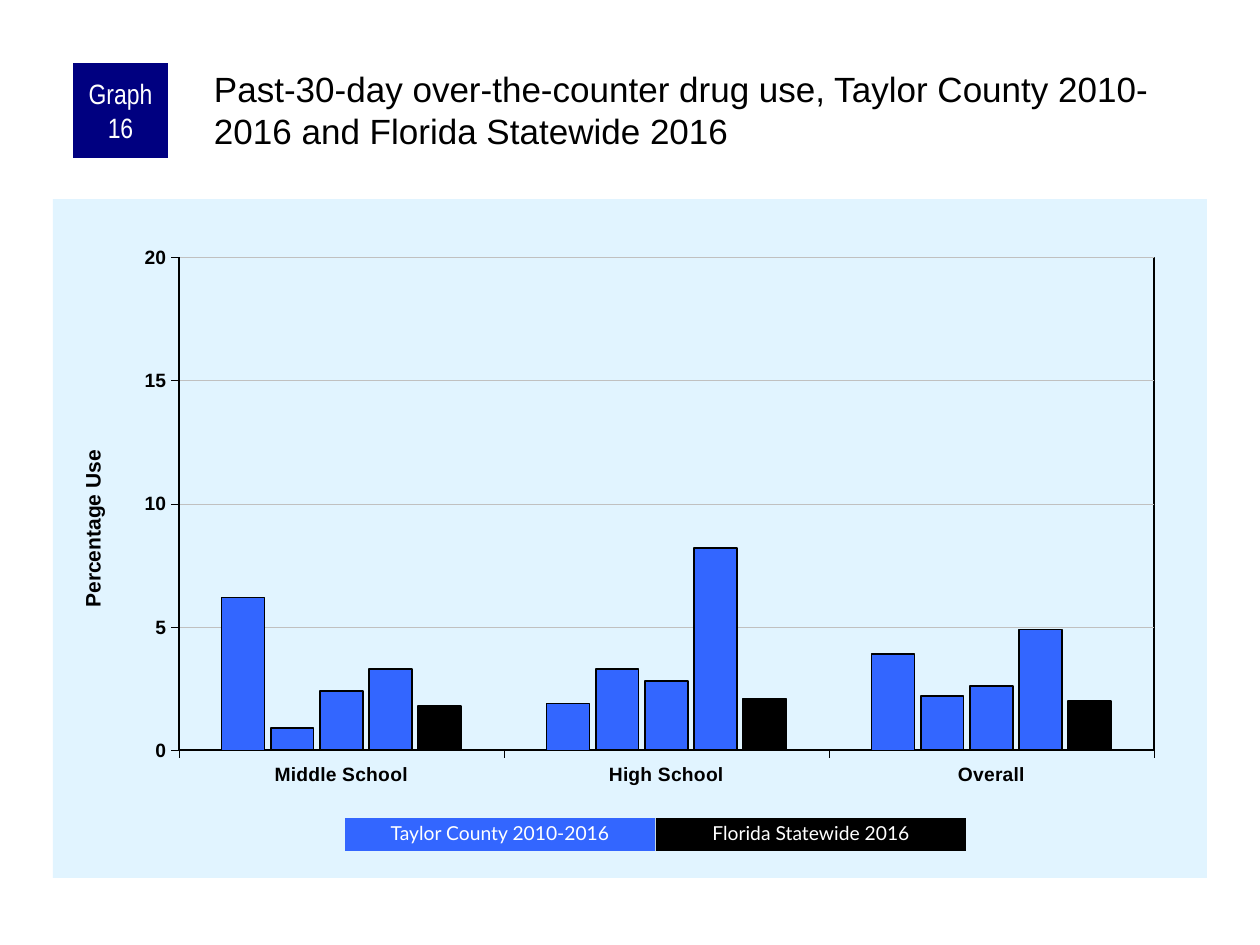
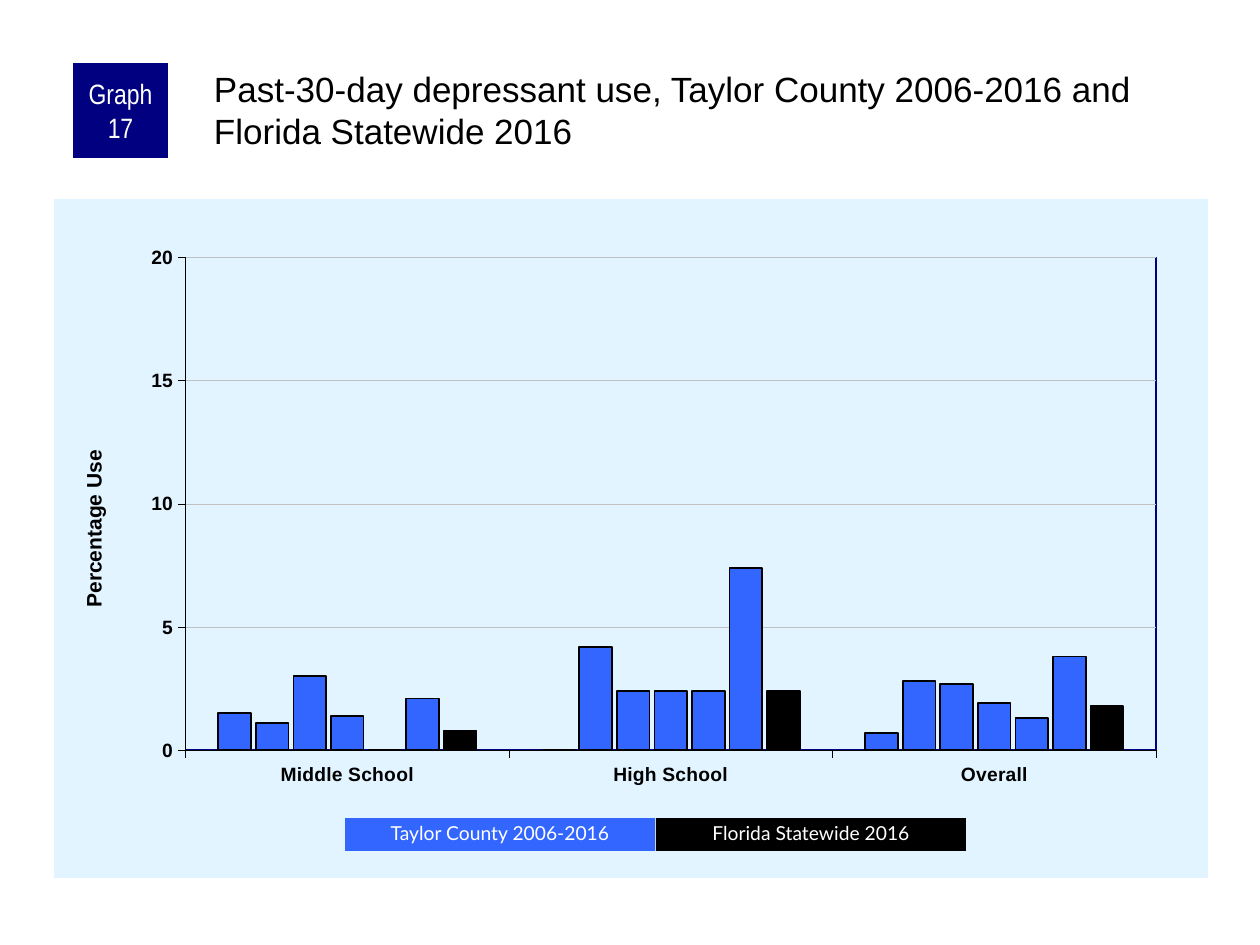
import pptx
import pptx.chart.data
import pptx.dml.color
import pptx.enum.chart
import pptx.enum.shapes
import pptx.enum.text
import pptx.oxml
import pptx.oxml.ns
import pptx.util

RGB = pptx.dml.color.RGBColor
Pt = pptx.util.Pt
NAVY = RGB(0x00, 0x00, 0x80)
BLUE = RGB(0x33, 0x66, 0xFF)
SKY = RGB(0xE1, 0xF4, 0xFF)
GREY = RGB(0xC0, 0xC0, 0xC0)
BLACK = RGB(0, 0, 0)
WHITE = RGB(255, 255, 255)

PX = 914400 / 126  # EMU in one px
NS = pptx.oxml.ns.nsdecls("c", "a")
CATS = ["Middle School", "High School", "Overall"]

# What differs between the slides; each row of values is one series
SLIDES = [
    dict(num=16, years="2010-2016", left=53, plot=(0.109, 0.845), edge=BLACK,
         title="Past-30-day over-the-counter drug use, Taylor County 2010-2016 "
               "and Florida Statewide 2016",
         rows=[(6.2, 1.9, 3.9), (0.9, 3.3, 2.2), (2.4, 2.8, 2.6),
               (3.3, 8.2, 4.9), (1.8, 2.1, 2)]),
    dict(num=17, years="2006-2016", left=54, plot=(0.114, 0.841), edge=NAVY,
         title="Past-30-day depressant use, Taylor County 2006-2016 "
               "and Florida Statewide 2016",
         rows=[(1.5, 0, 0.7), (1.1, 4.2, 2.8), (3, 2.4, 2.7), (1.4, 2.4, 1.9),
               (0, 2.4, 1.3), (2.1, 7.4, 3.8), (0.8, 2.4, 1.8)]),
]


def add_text(slide, box, text, font, size, fill=None, pads=(13, 6, 13, 6)):
    """Add a text box, or a filled rectangle with white centred text."""
    area = [round(n * PX) for n in box]
    if fill is None:
        shape = slide.shapes.add_textbox(*area)
    else:
        shape = slide.shapes.add_shape(pptx.enum.shapes.MSO_SHAPE.RECTANGLE, *area)
        shape.shadow.inherit = False
        shape.fill.solid()
        shape.fill.fore_color.rgb = fill
        shape.line.fill.background()
    frame = shape.text_frame
    frame.word_wrap = True
    frame.margin_left, frame.margin_top, frame.margin_right, frame.margin_bottom = [
        round(n * PX) for n in pads]
    para = frame.paragraphs[0]
    if fill is not None:
        frame.vertical_anchor = pptx.enum.text.MSO_ANCHOR.MIDDLE
        para.alignment = pptx.enum.text.PP_ALIGN.CENTER
    run = para.add_run()
    run.text = text
    run.font.name = font
    run.font.size = Pt(size)
    run.font.color.rgb = BLACK if fill is None else WHITE
    return para


def set_place(node, inner="", **parts):
    """Give a chart part a fixed place, in shares of the chart."""
    old = node.find(pptx.oxml.ns.qn("c:layout"))
    if old is not None:
        node.remove(old)
    modes = "".join(f'<c:{k}Mode val="edge"/>' for k in "xy")
    sizes = "".join(f'<c:{k} val="{v}"/>' for k, v in parts.items())
    new = pptx.oxml.parse_xml(
        f"<c:layout {NS}><c:manualLayout>{inner}{modes}{sizes}"
        "</c:manualLayout></c:layout>")
    text = node.find(pptx.oxml.ns.qn("c:tx"))
    node.insert(0 if text is None else 1, new)


deck = pptx.Presentation()
deck.slide_width = round(1260 * PX)
deck.slide_height = round(945 * PX)

for item in SLIDES:
    slide = deck.slides.add_slide(deck.slide_layouts[6])

    # Chart
    data = pptx.chart.data.CategoryChartData()
    data.categories = CATS
    for i, row in enumerate(item["rows"], 1):
        data.add_series(f"Series {i}", row)
    area = [round(n * PX) for n in (item["left"], 199, 1154, 679)]
    chart = slide.shapes.add_chart(
        pptx.enum.chart.XL_CHART_TYPE.COLUMN_CLUSTERED, *area, data).chart
    chart.has_legend = False
    chart.has_title = False
    chart.font.name = "Arial"
    chart.font.size = Pt(8)
    chart.font.color.rgb = BLACK

    # Bars: county in blue, the last series for the state in black
    plot = chart.plots[0]
    plot.gap_width = 200
    plot.overlap = -15
    plot.vary_by_categories = False
    bars = list(plot.series)
    for bar in bars:
        bar.invert_if_negative = False
        bar.format.fill.solid()
        bar.format.fill.fore_color.rgb = BLACK if bar is bars[-1] else BLUE
        bar.format.line.color.rgb = BLACK
        bar.format.line.width = Pt(1)
    if item["num"] == 16:
        bars[0].format.line.width = Pt(0.75)

    # Axes
    for axis in (chart.category_axis, chart.value_axis):
        axis.major_tick_mark = pptx.enum.chart.XL_TICK_MARK.OUTSIDE
        axis.format.line.color.rgb = BLACK
        axis.format.line.width = Pt(0.25)
        font = axis.tick_labels.font
        font.name = "Arial"
        font.size = Pt(11)
        font.bold = True
        font.color.rgb = BLACK
    axis = chart.value_axis
    axis.minimum_scale = 0
    axis.maximum_scale = 20
    axis.major_unit = 5
    axis.has_major_gridlines = True
    grid = axis.major_gridlines.format.line
    grid.color.rgb = GREY
    grid.width = Pt(0.25)
    run = axis.axis_title.text_frame.paragraphs[0].add_run()
    run.text = "Percentage Use"
    run.font.name = "Arial"
    run.font.size = Pt(12)
    run.font.bold = True
    run.font.color.rgb = BLACK
    set_place(axis.axis_title._element, x=0.02, y=0.364)

    # Plot frame and chart ground
    space = chart._chartSpace
    ground = space.chart.plotArea
    left, wide = item["plot"]
    set_place(ground, '<c:layoutTarget val="inner"/>', x=left, y=0.086, w=wide, h=0.726)
    ground.append(pptx.oxml.parse_xml(
        f'<c:spPr {NS}><a:noFill/><a:ln w="12700"><a:solidFill>'
        f'<a:srgbClr val="{item["edge"]}"/></a:solidFill></a:ln></c:spPr>'))
    space.chart.addnext(pptx.oxml.parse_xml(
        f'<c:spPr {NS}><a:solidFill><a:srgbClr val="{SKY}"/></a:solidFill>'
        "<a:ln><a:noFill/></a:ln></c:spPr>"))

    # Badge and title
    add_text(slide, (73, 63, 95, 95), f"Graph {item['num']}", "Arial Narrow", 16,
             NAVY, (6, 0, 6, 0))
    add_text(slide, (210, 63, 998, 105), item["title"], "Arial", 20, pads=(4, 4, 0, 0))

    # Legend
    keys = [(f"Taylor County {item['years']}", BLUE), ("Florida Statewide 2016", BLACK)]
    for i, (name, fill) in enumerate(keys):
        para = add_text(slide, (345 + 311 * i, 818, 310, 33), name, "Lato", 11, fill)
        para.line_spacing = 0.9

deck.save("out.pptx")
